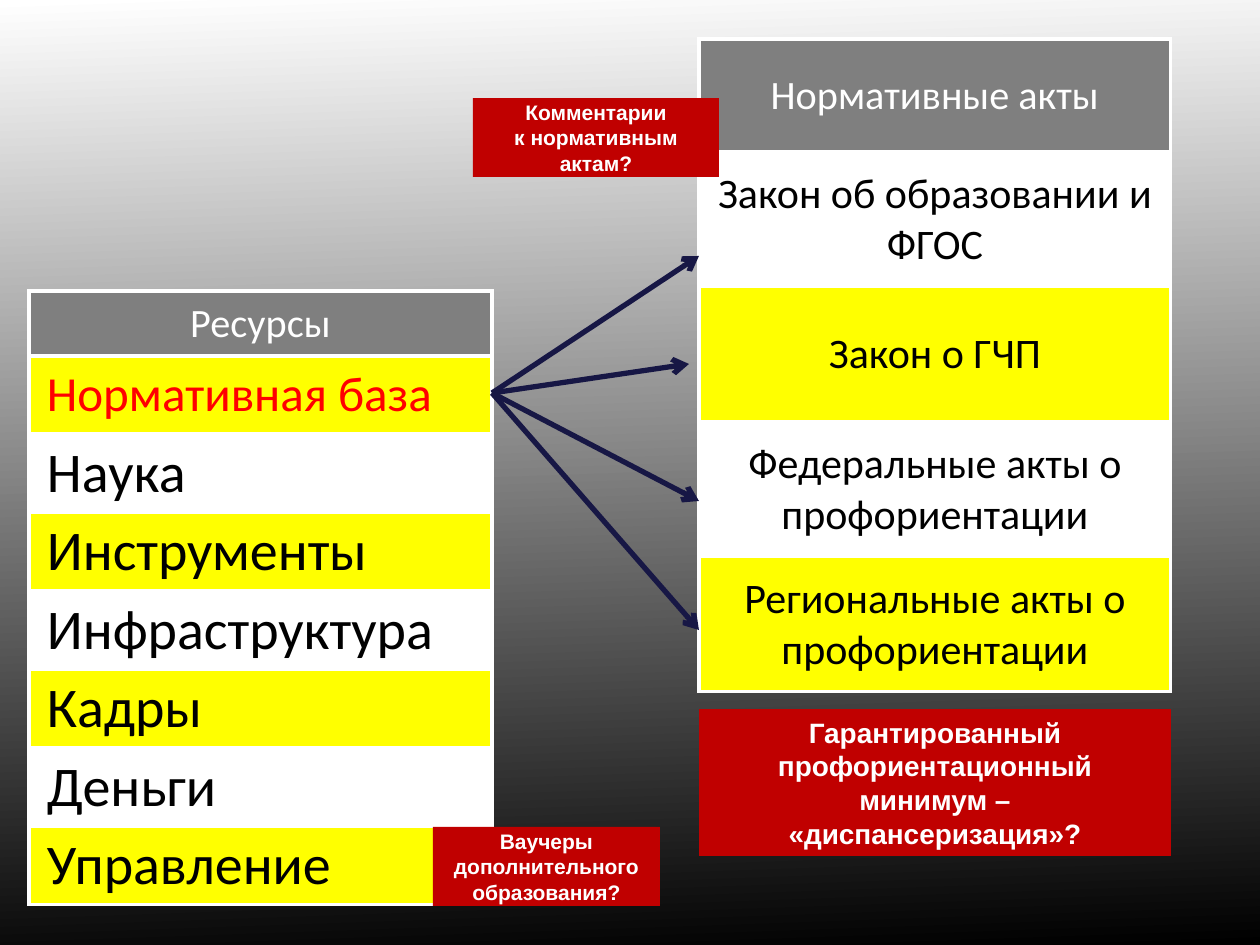
"""Builds a slide that links the list of resources to the legal acts behind it."""
from lxml.etree import SubElement
from pptx import Presentation
from pptx.dml.color import RGBColor
from pptx.enum.shapes import MSO_CONNECTOR, MSO_SHAPE
from pptx.enum.text import MSO_ANCHOR, PP_ALIGN
from pptx.oxml.ns import qn
from pptx.util import Pt

PX = 914400 / 126
WHITE, BLACK, GREY = "FFFFFF", "000000", "7F7F7F"
YELLOW, RED, DARK, NAVY = "FFFF00", "FF0000", "C00000", "171745"


def color(code):
    return RGBColor.from_string(code)


def style(frame, font, size, code, align, bold=False):
    for para in frame.paragraphs:
        para.alignment = align
        for run in para.runs:
            run.font.name, run.font.size, run.font.bold = font, Pt(size), bold
            run.font.color.rgb = color(code)


deck = Presentation()
deck.slide_width, deck.slide_height = int(1260 * PX), int(945 * PX)
slide = deck.slides.add_slide(deck.slide_layouts[6])
shapes = slide.shapes

back = slide.background.fill
back.gradient()
back.gradient_angle = 272
for stop, code, place in zip(back.gradient_stops, (WHITE, BLACK), (0, 1)):
    stop.color.rgb = color(code)
    stop.position = place

means = ["Ресурсы", "Нормативная база", "Наука", "Инструменты",
         "Инфраструктура", "Кадры", "Деньги", "Управление"]
acts = ["Нормативные акты", "Закон об образовании и ФГОС", "Закон о ГЧП",
        "Федеральные акты о профориентации",
        "Региональные акты о профориентации"]
tables = [
    (means, (29, 291, 463), 65, 78, 32, PP_ALIGN.LEFT, 18, (WHITE, YELLOW)),
    (acts, (699, 39, 472), 113, 135, 24, PP_ALIGN.CENTER, 5, (YELLOW, WHITE)),
]
for words, (left, top, width), head, step, size, align, inset, bands in tables:
    tall = head + step * (len(words) - 1)
    box = [int(n * PX) for n in (left, top, width, tall)]
    table = shapes.add_table(len(words), 1, *box).table
    table.first_row = table.horz_banding = False
    for row, text in enumerate(words):
        table.rows[row].height = int((step if row else head) * PX)
        cell = table.cell(row, 0)
        cell.text = text
        cell.vertical_anchor = MSO_ANCHOR.MIDDLE
        cell.margin_top = cell.margin_bottom = cell.margin_right = int(5 * PX)
        cell.margin_left = int((inset if row else 5) * PX)
        for side in ("lnL", "lnR", "lnT", "lnB"):
            edge = SubElement(cell._tc.get_or_add_tcPr(), qn(f"a:{side}"), w=str(Pt(2)))
            SubElement(SubElement(edge, qn("a:solidFill")), qn("a:srgbClr"), val=WHITE)
        cell.fill.solid()
        cell.fill.fore_color.rgb = color(bands[row % 2] if row else GREY)
        if row:
            style(cell.text_frame, "Calibri", size, BLACK, align)
        else:
            style(cell.text_frame, "Calibri", 23, WHITE, PP_ALIGN.CENTER)
        if text == "Нормативная база":
            style(cell.text_frame, "Calibri", 28, RED, align)

for end in [(689, 364), (699, 256), (699, 501), (699, 630)]:
    ends = [int(n * PX) for n in (492, 393, *end)]
    arrow = shapes.add_connector(MSO_CONNECTOR.STRAIGHT, *ends)
    arrow.line.color.rgb = color(NAVY)
    arrow.line.width = Pt(3)
    SubElement(arrow.line._get_or_add_ln(), qn("a:tailEnd"), type="arrow")
    SubElement(arrow._element.spPr, qn("a:effectLst"))

notes = [
    ((699, 709, 472, 147), 16,
     "Гарантированный профориентационный минимум – «диспансеризация»?"),
    ((473, 98, 246, 79), 12, "Комментарии\nк нормативным актам?"),
    ((433, 827, 227, 79), 12, "Ваучеры\nдополнительного\nобразования?"),
]
for place, size, text in notes:
    note = shapes.add_shape(MSO_SHAPE.RECTANGLE, *[int(n * PX) for n in place])
    note.shadow.inherit = False
    note.fill.solid()
    note.fill.fore_color.rgb = color(DARK)
    note.line.fill.background()
    note.text_frame.text = text
    note.text_frame.word_wrap = True
    style(note.text_frame, "Arial", size, WHITE, PP_ALIGN.CENTER, True)

deck.save("out.pptx")
